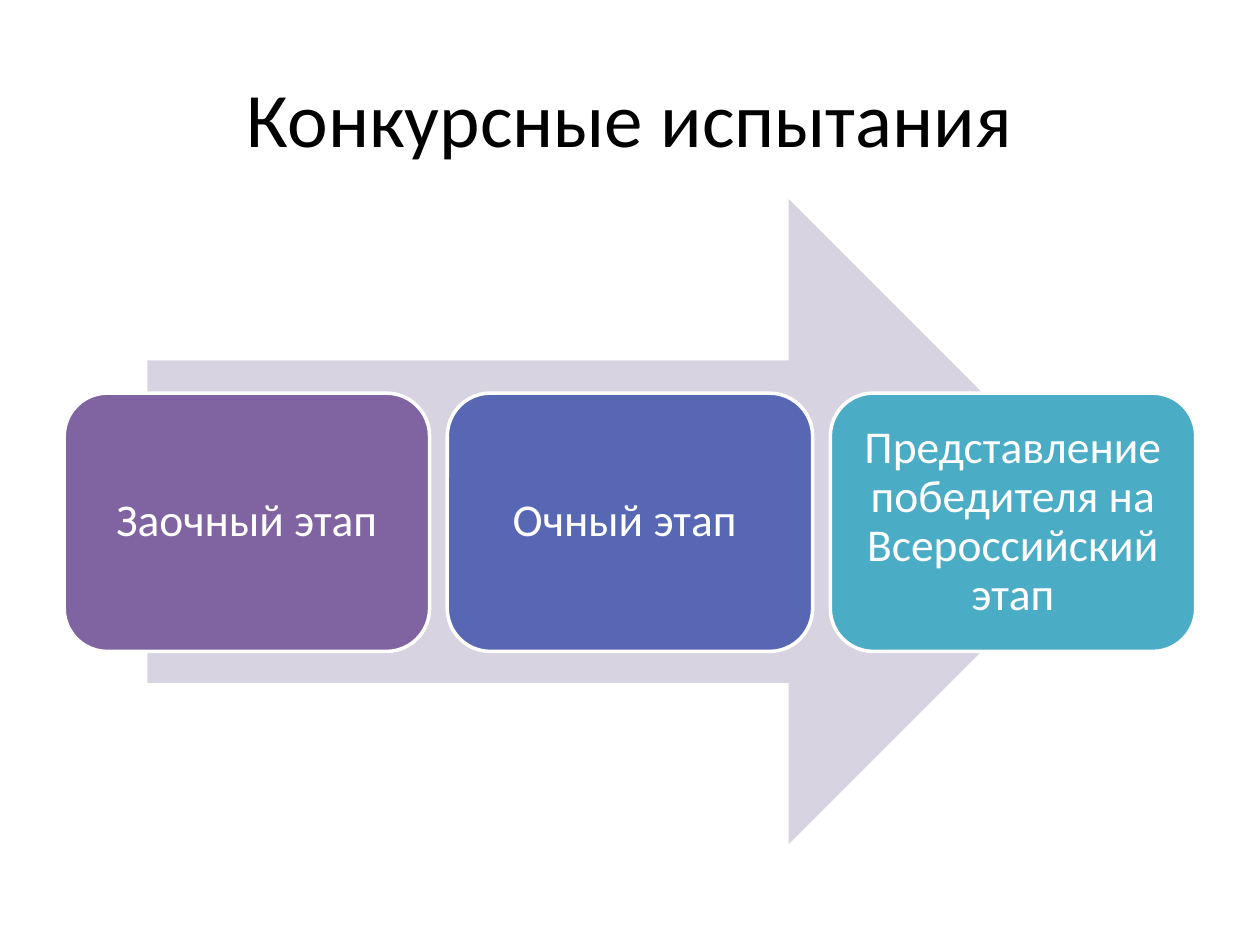
import pptx
import pptx.util
import pptx.dml.color
import pptx.enum.shapes
import pptx.enum.text

Inches = pptx.util.Inches
Pt = pptx.util.Pt
SHAPE = pptx.enum.shapes.MSO_SHAPE
ALIGN = pptx.enum.text.PP_ALIGN
ANCHOR = pptx.enum.text.MSO_ANCHOR

TITLE = "Конкурсные испытания"
STAGES = [
    ("Заочный этап", "8064A2"),
    ("Очный этап ", "5767B4"),
    ("Представление победителя на Всероссийский этап", "4BACC6"),
]
LEFT, TOP, WIDTH, HEIGHT, GAP = 0.51, 3.12, 2.9, 2.05, 0.14
INSET = 0.11


def color(code):
    return pptx.dml.color.RGBColor.from_string(code)


def write(frame, text, size, code):
    frame.text = text
    frame.word_wrap = True
    frame.vertical_anchor = ANCHOR.MIDDLE
    par = frame.paragraphs[0]
    par.alignment = ALIGN.CENTER
    font = par.runs[0].font
    font.name = "Calibri"
    font.size = Pt(size)
    font.color.rgb = color(code)
    return par


def draw(slide, kind, box, fill):
    shape = slide.shapes.add_shape(kind, *map(Inches, box))
    shape.shadow.inherit = False
    shape.fill.solid()
    shape.fill.fore_color.rgb = color(fill)
    return shape


def main():
    deck = pptx.Presentation()
    deck.slide_width, deck.slide_height = Inches(10), Inches(7.5)
    slide = deck.slides.add_slide(deck.slide_layouts[5])

    title = slide.shapes.title
    title.left, title.top = Inches(0.5), Inches(0.3)
    title.width, title.height = Inches(9), Inches(1.25)
    write(title.text_frame, TITLE, 44, "000000")

    arrow = draw(slide, SHAPE.RIGHT_ARROW, (1.17, 1.58, 7.65, 5.12), "D8D3E0")
    arrow.line.fill.background()

    for i, (text, fill) in enumerate(STAGES):
        left = LEFT + i * (WIDTH + GAP)
        card = draw(slide, SHAPE.ROUNDED_RECTANGLE, (left, TOP, WIDTH, HEIGHT), fill)
        card.line.color.rgb = color("FFFFFF")
        card.line.width = Pt(2)
        frame = card.text_frame
        frame.margin_left = frame.margin_right = Inches(INSET)
        frame.margin_top = frame.margin_bottom = Inches(INSET)
        write(frame, text, 26, "FFFFFF").line_spacing = 0.9

    deck.save("out.pptx")


if __name__ == "__main__":
    main()
